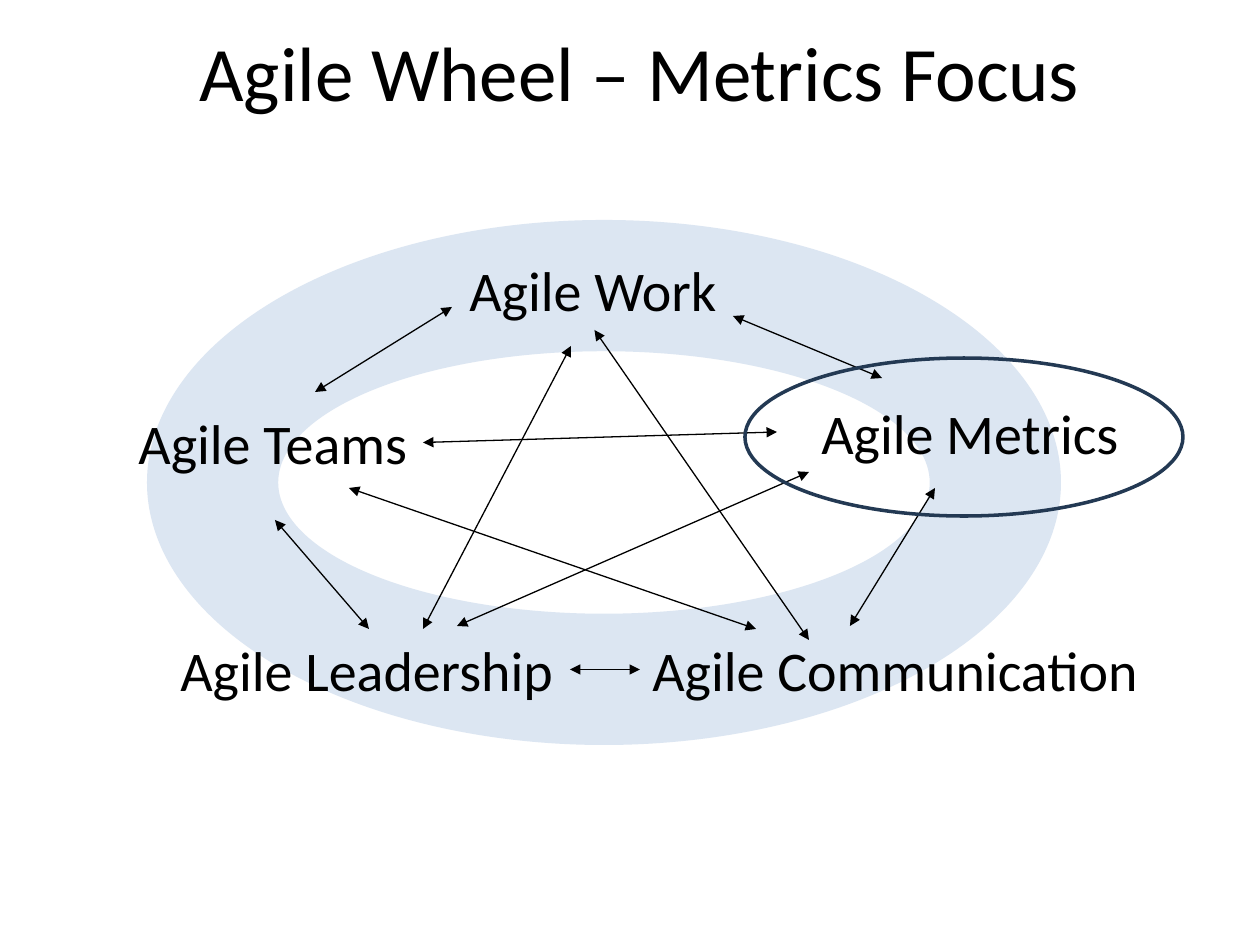
from lxml import etree
from pptx import Presentation
from pptx import util as u
from pptx.dml.color import RGBColor
from pptx.enum import shapes, text
from pptx.oxml.ns import qn

PX = 914400 / 126
FONT = "Calibri"
HUES = {"ink": "000000", "ring": "DCE6F2", "focus": "233953"}
TOP, LEFT, BOTTOM, RIGHT = range(4)
LABELS = {
    "Agile Work": (310, 29, 275),
    "Agile Metrics": (662, 172, 325),
    "Agile Communication": (493, 409, 517),
    "Agile Teams": (-21, 182, 297),
    "Agile Leadership": (21, 409, 402),
}
ARROWS = [
    ((424, 126), (276, 409)),
    (("Agile Work", BOTTOM), (662, 420)),
    ((586, 96), (735, 158)),
    ((305, 87), (168, 172)),
    ((310, 406), (662, 252)),
    ((202, 268), (609, 409)),
    (("Agile Leadership", RIGHT), ("Agile Communication", LEFT)),
    (("Agile Teams", RIGHT), (630, 212)),
    ((788, 268), (703, 406)),
    ((128, 300), ("Agile Leadership", TOP)),
]


def px(*vals):
    """Turn px lengths into EMU."""
    return [u.Emu(round(v * PX)) for v in vals]


def hue(name):
    """Return a named colour."""
    return RGBColor.from_string(HUES[name])


def write(frame, words, size):
    """Add one run of words to a frame."""
    run = frame.paragraphs[0].add_run()
    run.text = words
    run.font.size = u.Pt(size)
    run.font.name = FONT
    run.font.color.rgb = hue("ink")


def title(slide, box, words):
    """Place the slide title."""
    head = slide.shapes.title
    head.left, head.top, head.width, head.height = px(*box)
    head.text_frame.vertical_anchor = text.MSO_ANCHOR.TOP
    head.text_frame.paragraphs[0].alignment = text.PP_ALIGN.CENTER
    write(head.text_frame, words, 44)


def label(slide, box, words):
    """Place one topic label."""
    area = slide.shapes.add_textbox(*px(*box))
    area.text_frame.word_wrap = False
    area.text_frame.auto_size = text.MSO_AUTO_SIZE.SHAPE_TO_FIT_TEXT
    write(area.text_frame, words, 32)
    return area


def arrow(slide, left, top, ends, nodes):
    """Draw a two-headed arrow between points or label sides."""
    spots = [(0, 0) if end[0] in nodes else (left + end[0], top + end[1])
             for end in ends]
    line = slide.shapes.add_connector(
        shapes.MSO_CONNECTOR.STRAIGHT, *px(*spots[0], *spots[1]))
    for end, join in zip(ends, (line.begin_connect, line.end_connect)):
        if end[0] in nodes:
            join(nodes[end[0]], end[1])
    line.line.color.rgb = hue("ink")
    line.line.width = u.Pt(0.75)
    pen = line.line._get_or_add_ln()
    for tag in ("a:headEnd", "a:tailEnd"):
        etree.SubElement(pen, qn(tag), type="triangle")
    etree.SubElement(line._element.spPr, qn("a:effectLst"))


def wheel(slide, box):
    """Draw the ring, its labels, the arrows and the focus oval."""
    left, top, wide, high = box
    ring = slide.shapes.add_shape(shapes.MSO_SHAPE.DONUT, *px(*box))
    ring.shadow.inherit = False
    ring.fill.solid()
    ring.fill.fore_color.rgb = hue("ring")
    ring.line.fill.background()
    nodes = {words: label(slide, (left + x, top + y, w, 81), words)
             for words, (x, y, w) in LABELS.items()}
    for ends in ARROWS:
        arrow(slide, left, top, ends, nodes)
    oval = slide.shapes.add_shape(
        shapes.MSO_SHAPE.OVAL, *px(left + 598, top + 138, 438, 158))
    oval.shadow.inherit = False
    oval.fill.background()
    oval.line.color.rgb = hue("focus")
    oval.line.width = u.Pt(2)


def main():
    """Build and save the slide."""
    deck = Presentation()
    deck.slide_width, deck.slide_height = px(1260, 945)
    slide = deck.slides.add_slide(deck.slide_layouts[5])
    title(slide, (73, 18, 1134, 158), "Agile Wheel – Metrics Focus")
    wheel(slide, (147, 220, 914, 525))
    deck.save("out.pptx")


if __name__ == "__main__":
    main()
